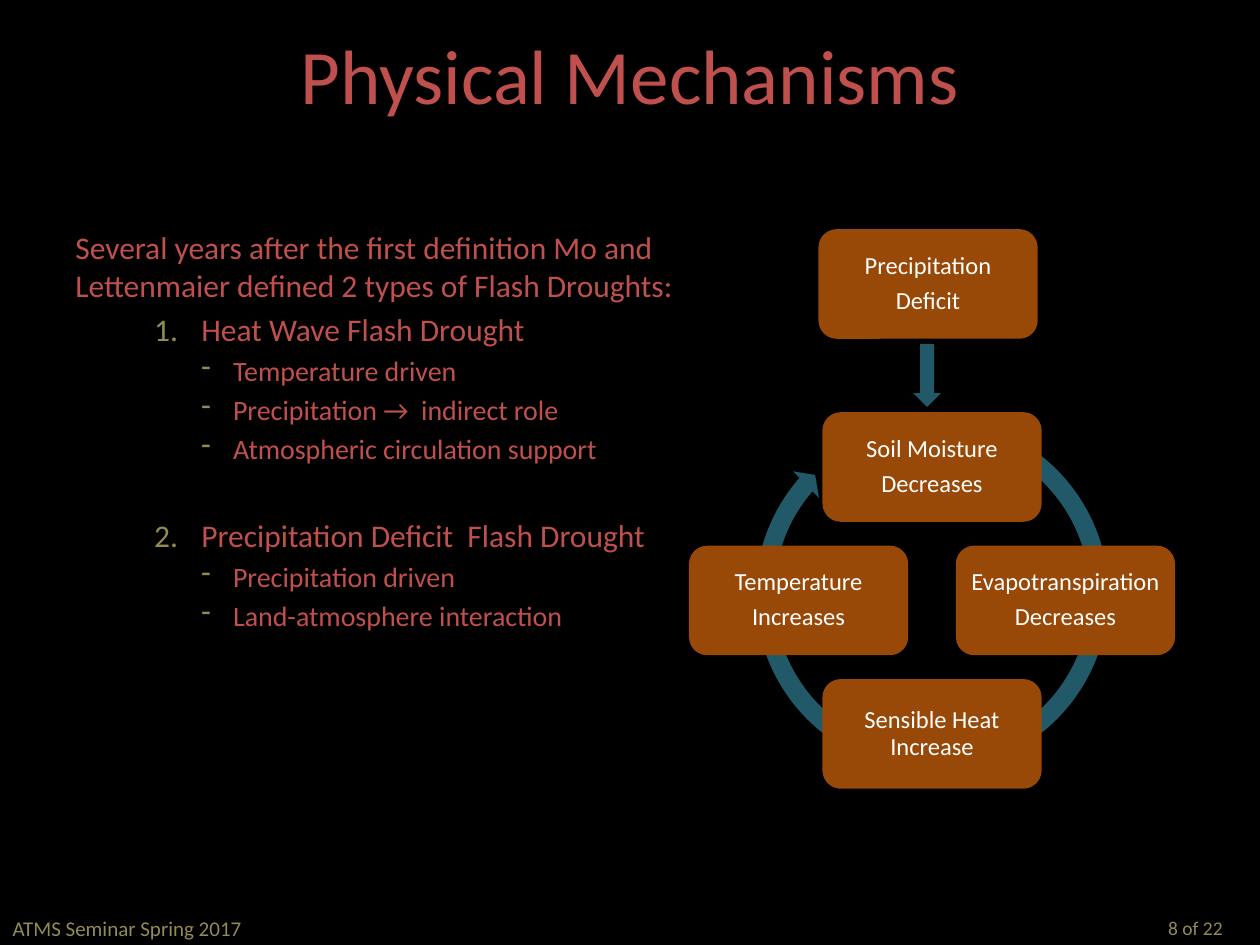
from dataclasses import dataclass

from lxml.etree import SubElement
from pptx import Presentation
from pptx.dml.color import RGBColor
from pptx.enum.shapes import MSO_SHAPE as Preset
from pptx.enum.text import MSO_ANCHOR as Anchor, PP_ALIGN as Align
from pptx.oxml.ns import qn
from pptx.util import Cm, Pt


@dataclass(frozen=True)
class Theme:
    font: str = "Calibri"
    background: str = "000000"
    accent: str = "C0504D"
    muted: str = "948A54"
    node: str = "984807"
    arrow: str = "215968"
    node_text: str = "FFFFFF"
    title_size: float = 44
    body_size: float = 18
    detail_size: float = 16
    node_size: float = 14
    footer_size: float = 12
    page_size: float = 11.1


THEME = Theme()
INTRO = ("Several years after the first definition Mo and Lettenmaier "
         "defined 2 types of Flash Droughts:")
DROUGHT_TYPES = [
    ("Heat Wave Flash Drought",
     ["Temperature driven", "Precipitation →  indirect role",
      "Atmospheric circulation support"]),
    ("Precipitation Deficit  Flash Drought",
     ["Precipitation driven", "Land-atmosphere interaction"]),
]
# Lines of each node with its direction from the centre of the cycle
CYCLE_NODES = [
    (["Soil Moisture", "Decreases"], (0, -1)),
    (["Evapotranspiration", "Decreases"], (1, 0)),
    (["Sensible Heat Increase"], (0, 1)),
    (["Temperature", "Increases"], (-1, 0)),
]


def style(paragraph, size, color):
    paragraph.font.name = THEME.font
    paragraph.font.size = Pt(size)
    paragraph.font.color.rgb = RGBColor.from_string(color)


def add_text_frame(slide, box):
    frame = slide.shapes.add_textbox(*map(Cm, box)).text_frame
    frame.word_wrap = True
    return frame


def add_label(slide, box, text, size, color, anchor=Anchor.TOP):
    frame = add_text_frame(slide, box)
    frame.margin_left = frame.margin_right = 0
    frame.vertical_anchor = anchor
    paragraph = frame.paragraphs[0]
    paragraph.text = text
    paragraph.alignment = Align.CENTER
    style(paragraph, size, color)


def add_bullet(paragraph, indent, hanging, tag, **attributes):
    properties = paragraph._p.get_or_add_pPr()
    properties.set("marL", str(Cm(indent)))
    properties.set("indent", str(-Cm(hanging)))
    color = SubElement(properties, qn("a:buClr"))
    SubElement(color, qn("a:srgbClr"), val=THEME.muted)
    SubElement(properties, qn(tag), **attributes)


def add_drought_types(slide, box):
    frame = add_text_frame(slide, box)
    intro = frame.paragraphs[0]
    intro.text = INTRO
    style(intro, THEME.body_size, THEME.accent)
    for number, (name, details) in enumerate(DROUGHT_TYPES, 1):
        heading = frame.add_paragraph()
        heading.text = name
        heading.space_before = Pt(3.6 if number == 1 else 29)
        add_bullet(heading, 2.54, 0.95, "a:buAutoNum",
                   type="arabicPeriod", startAt=str(number))
        style(heading, THEME.body_size, THEME.accent)
        for text in details:
            detail = frame.add_paragraph()
            detail.text = text
            detail.space_before = Pt(3.2)
            add_bullet(detail, 3.18, 0.64, "a:buChar", char="-")
            style(detail, THEME.detail_size, THEME.accent)


def add_block(slide, preset, center_x, center_y, width, height, color):
    shape = slide.shapes.add_shape(
        preset, Cm(center_x - width / 2), Cm(center_y - height / 2),
        Cm(width), Cm(height))
    shape.shadow.inherit = False
    shape.fill.solid()
    shape.fill.fore_color.rgb = RGBColor.from_string(color)
    shape.line.fill.background()
    return shape


def add_node(slide, center_x, center_y, width, height, lines):
    shape = add_block(slide, Preset.ROUNDED_RECTANGLE, center_x, center_y,
                      width, height, THEME.node)
    frame = shape.text_frame
    frame.word_wrap = True
    frame.vertical_anchor = Anchor.MIDDLE
    frame.margin_left = frame.margin_right = Cm(0.15)
    frame.margin_top = frame.margin_bottom = Cm(0.15)
    for index, line in enumerate(lines):
        paragraph = frame.add_paragraph() if index else frame.paragraphs[0]
        paragraph.text = line
        paragraph.alignment = Align.CENTER
        paragraph.line_spacing = 0.9
        if index < len(lines) - 1:
            paragraph.space_after = Pt(4.9)
        style(paragraph, THEME.node_size, THEME.node_text)


def add_feedback_cycle(slide, box):
    left, top, width, height = box
    node_width, node_height, ring_size = 4.42, 2.21, 7.49
    orbit = (width - node_width) / 2
    center_x = left + width / 2
    center_y = top + height - node_height / 2 - orbit

    # Ring behind the nodes
    ring = add_block(slide, Preset.CIRCULAR_ARROW, center_x, center_y - 0.12,
                     ring_size, ring_size, THEME.arrow)
    for index, value in enumerate((0.05, 2.73, 132.65, 177.43, 0.05)):
        ring.adjustments[index] = value

    # Nodes on the cycle
    for lines, (across, down) in CYCLE_NODES:
        add_node(slide, center_x + across * orbit, center_y + down * orbit,
                 node_width, node_height, lines)

    # Trigger that leads into the cycle
    trigger_x = center_x - 0.08
    add_node(slide, trigger_x, top + node_height / 2, node_width, node_height,
             ["Precipitation", "Deficit"])
    add_block(slide, Preset.DOWN_ARROW, trigger_x - 0.02,
              top + node_height + 0.74, 0.56, 1.27, THEME.arrow)


def add_footer(slide, box):
    left, top, width, height = box
    add_label(slide, (left, top, 5.13, height), "ATMS Seminar Spring 2017",
              THEME.footer_size, THEME.muted)
    page_width = 2.54
    add_label(slide, (left + width - page_width, top, page_width, height),
              "8 of 22", THEME.page_size, THEME.muted)


def main():
    presentation = Presentation()
    presentation.slide_width, presentation.slide_height = Cm(25.4), Cm(19.05)
    slide = presentation.slides.add_slide(presentation.slide_layouts[6])
    slide.background.fill.solid()
    slide.background.fill.fore_color.rgb = RGBColor.from_string(
        THEME.background)

    add_label(slide, (1.27, 0, 22.86, 2.97), "Physical Mechanisms",
              THEME.title_size, THEME.accent, Anchor.MIDDLE)
    add_drought_types(slide, (1.27, 4.47, 12.55, 9.7))
    add_feedback_cycle(slide, (13.89, 4.62, 9.8, 11.28))
    add_footer(slide, (0, 18.34, 25.37, 0.71))
    presentation.save("out.pptx")


if __name__ == "__main__":
    main()
